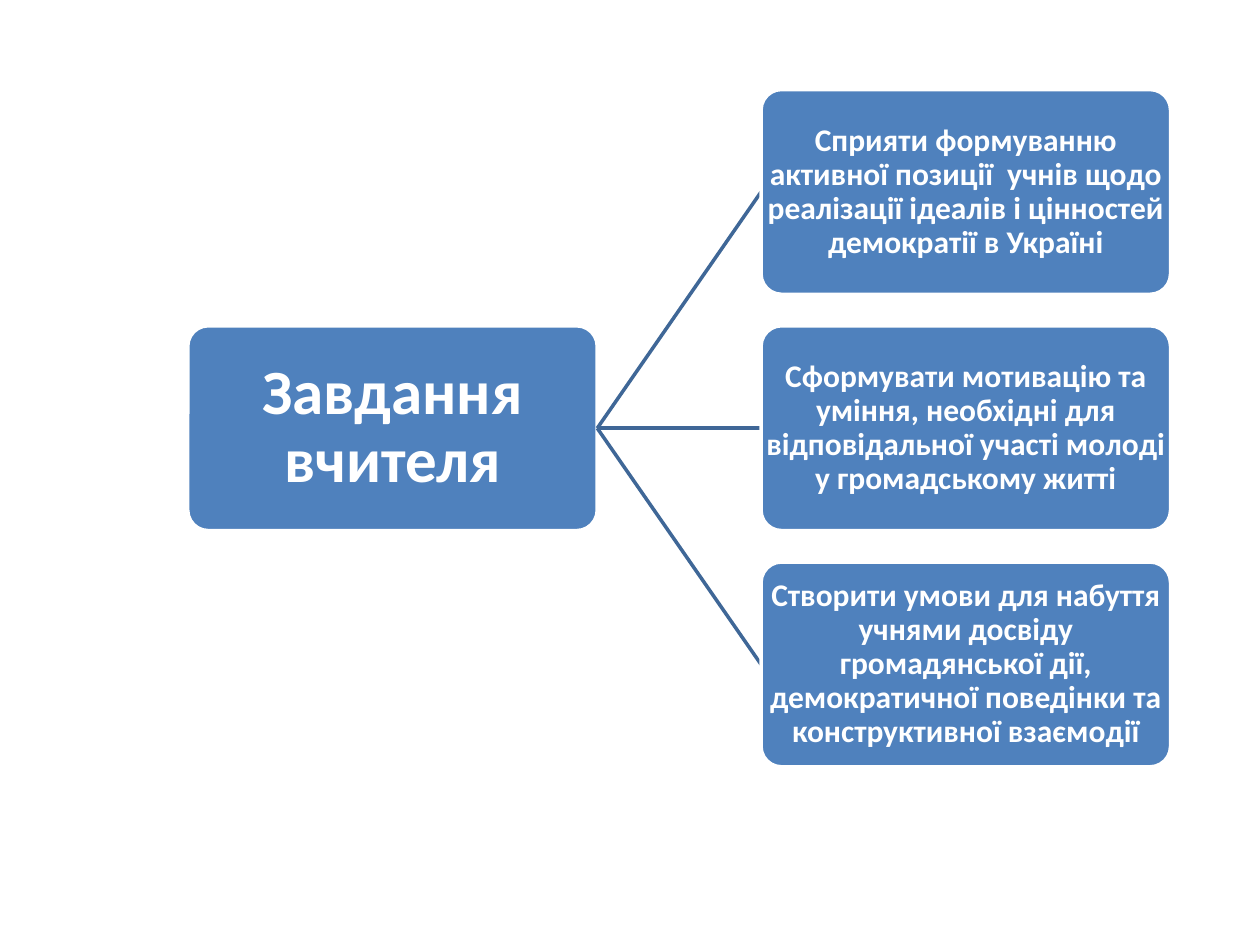
from pptx import Presentation
from pptx.dml.color import RGBColor
from pptx.enum.shapes import MSO_CONNECTOR, MSO_SHAPE
from pptx.enum.text import MSO_ANCHOR, PP_ALIGN
from pptx.oxml.ns import qn
from pptx.util import Pt
from lxml import etree

ROUND = MSO_SHAPE.ROUNDED_RECTANGLE
STRAIGHT = MSO_CONNECTOR.STRAIGHT
MIDDLE = MSO_ANCHOR.MIDDLE
CENTER = PP_ALIGN.CENTER

WIDTH, HEIGHT, GAP = 234, 117, 18
ROOT_X, TASK_X, TOP = 107.3, 434.9, 51.2
STEP = HEIGHT + GAP
BLUE, DARK, WHITE = "4F81BD", "3F6797", "FFFFFF"
TITLE = "Завдання вчителя"
TASKS = [
    "Сприяти формуванню активної позиції  учнів щодо реалізації ідеалів і цінностей демократії в Україні",
    "Сформувати мотивацію та уміння, необхідні для відповідальної участі молоді у громадському житті",
    "Створити умови для набуття учнями досвіду громадянської дії, демократичної поведінки та конструктивної взаємодії",
]


def color(code):
    """Turn a hex string into a colour."""
    return RGBColor.from_string(code)


def add_text(slide, text, x, y, size=18, inset=0.8, tint=WHITE):
    """Add centred bold text over the area of a box."""
    label = slide.shapes.add_textbox(Pt(x), Pt(y), Pt(WIDTH), Pt(HEIGHT))
    frame = label.text_frame
    frame.word_wrap = True
    frame.vertical_anchor = MIDDLE
    frame.margin_left = frame.margin_right = Pt(inset)
    frame.margin_top = frame.margin_bottom = Pt(inset)
    para = frame.paragraphs[0]
    para.alignment = CENTER
    para.line_spacing = 0.9
    run = para.add_run()
    run.text = text
    font = run.font
    font.name, font.size, font.bold = "Calibri", Pt(size), True
    font.color.rgb = color(tint)


def add_box(slide, text, x, y, **style):
    """Add a rounded box with its text and return the box."""
    box = slide.shapes.add_shape(ROUND, Pt(x), Pt(y), Pt(WIDTH), Pt(HEIGHT))
    box.adjustments[0] = 0.1
    box.shadow.inherit = False
    box.fill.solid()
    box.fill.fore_color.rgb = color(BLUE)
    box.line.color.rgb = color(WHITE)
    box.line.width = Pt(2)
    add_text(slide, text, x, y, **style)
    return box


def add_link(slide, root):
    """Add a line that starts at the right side of the root box."""
    link = slide.shapes.add_connector(STRAIGHT, 0, 0, 0, 0)
    link.line.color.rgb = color(DARK)
    link.line.width = Pt(2)
    etree.SubElement(link._element.spPr, qn("a:effectLst"))
    link.begin_connect(root, 3)
    return link


def main():
    """Build the slide and save it."""
    deck = Presentation()
    deck.slide_width, deck.slide_height = Pt(720), Pt(540)
    slide = deck.slides.add_slide(deck.slide_layouts[6])
    root = add_box(slide, TITLE, ROOT_X, TOP + STEP, size=36, inset=2)
    for row, text in enumerate(TASKS):
        link = add_link(slide, root)
        task = add_box(slide, text, TASK_X, TOP + row * STEP)
        link.end_connect(task, 1)
    deck.save("out.pptx")


if __name__ == "__main__":
    main()
